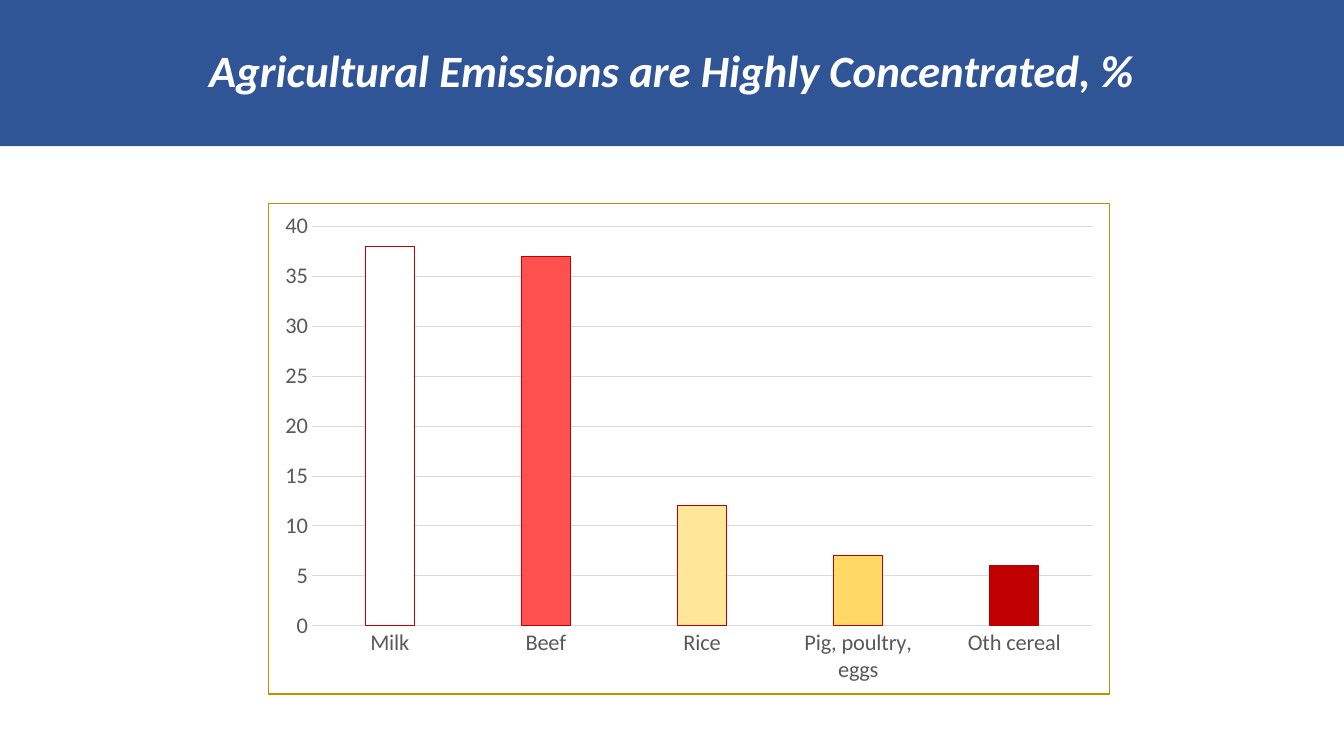
from lxml import etree
from pptx import Presentation
from pptx import util as u
from pptx.chart.data import CategoryChartData
from pptx.dml.color import RGBColor
from pptx.enum import chart as ch, shapes, text
from pptx.oxml.ns import qn

Pt = u.Pt
FONT = "Calibri"
BARS = [
    ("Milk", 38, "FFFFFF"),
    ("Beef", 37, "FF5050"),
    ("Rice", 12, "FFE699"),
    ("Pig, poultry, eggs", 7, "FFD966"),
    ("Oth cereal", 6, "C00000"),
]


def paint(fill, color):
    fill.solid()
    fill.fore_color.rgb = RGBColor.from_string(color)


def stroke(line, color):
    paint(line.fill, color)
    line.width = Pt(0.75)


def style(font, size, color):
    font.name = FONT
    font.size = Pt(size)
    font.color.rgb = RGBColor.from_string(color)


def add_title(slide, words):
    band = slide.shapes.add_shape(
        shapes.MSO_SHAPE.RECTANGLE, 0, 0, Pt(960), Pt(104.4))
    band.shadow.inherit = False
    paint(band.fill, "2F5597")
    band.line.fill.background()
    frame = band.text_frame
    frame.text = words
    frame.word_wrap = True
    frame.vertical_anchor = text.MSO_ANCHOR.MIDDLE
    para = frame.paragraphs[0]
    para.alignment = text.PP_ALIGN.CENTER
    para.line_spacing = 0.9
    font = para.runs[0].font
    style(font, 32, "FFFFFF")
    font.bold = font.italic = True


def frame_chart(chart, fill, edge):
    """Give the whole chart area a fill and a border."""
    props = etree.Element(qn("c:spPr"))
    line = etree.Element(qn("a:ln"), w=str(Pt(0.75)))
    for box, color in ((props, fill), (line, edge)):
        solid = etree.SubElement(box, qn("a:solidFill"))
        etree.SubElement(solid, qn("a:srgbClr"), val=color)
    props.append(line)
    chart.element.find(qn("c:chart")).addnext(props)


def style_axes(chart):
    for axis in (chart.category_axis, chart.value_axis):
        axis.major_tick_mark = axis.minor_tick_mark = ch.XL_TICK_MARK.NONE
        style(axis.tick_labels.font, 16, "595959")
    stroke(chart.category_axis.format.line, "D9D9D9")
    axis = chart.value_axis
    axis.format.line.fill.background()
    axis.minimum_scale, axis.maximum_scale, axis.major_unit = 0, 40, 5
    stroke(axis.major_gridlines.format.line, "D9D9D9")


def add_bars(slide, bars):
    names, values, colors = zip(*bars)
    data = CategoryChartData()
    data.categories = names
    data.add_series("Series 1", values)
    chart = slide.shapes.add_chart(
        ch.XL_CHART_TYPE.COLUMN_CLUSTERED,
        Pt(191.5), Pt(144.7), Pt(601.2), Pt(351.4), data).chart
    chart.has_legend = chart.has_title = False
    style(chart.font, 10, "000000")
    frame_chart(chart, "FFFFFF", "BF9000")
    style_axes(chart)
    plot = chart.plots[0]
    plot.vary_by_categories = False
    plot.gap_width, plot.overlap = 219, -27
    series = plot.series[0]
    paint(series.format.fill, "4472C4")
    stroke(series.format.line, "C00000")
    for i, color in enumerate(colors):
        form = series.points[i].format
        paint(form.fill, color)
        stroke(form.line, "C00000")


def main():
    deck = Presentation()
    deck.slide_width, deck.slide_height = Pt(960), Pt(540)
    slide = deck.slides.add_slide(deck.slide_layouts[6])
    add_title(slide, "Agricultural Emissions are Highly Concentrated, %")
    add_bars(slide, BARS)
    deck.save("out.pptx")


if __name__ == "__main__":
    main()
